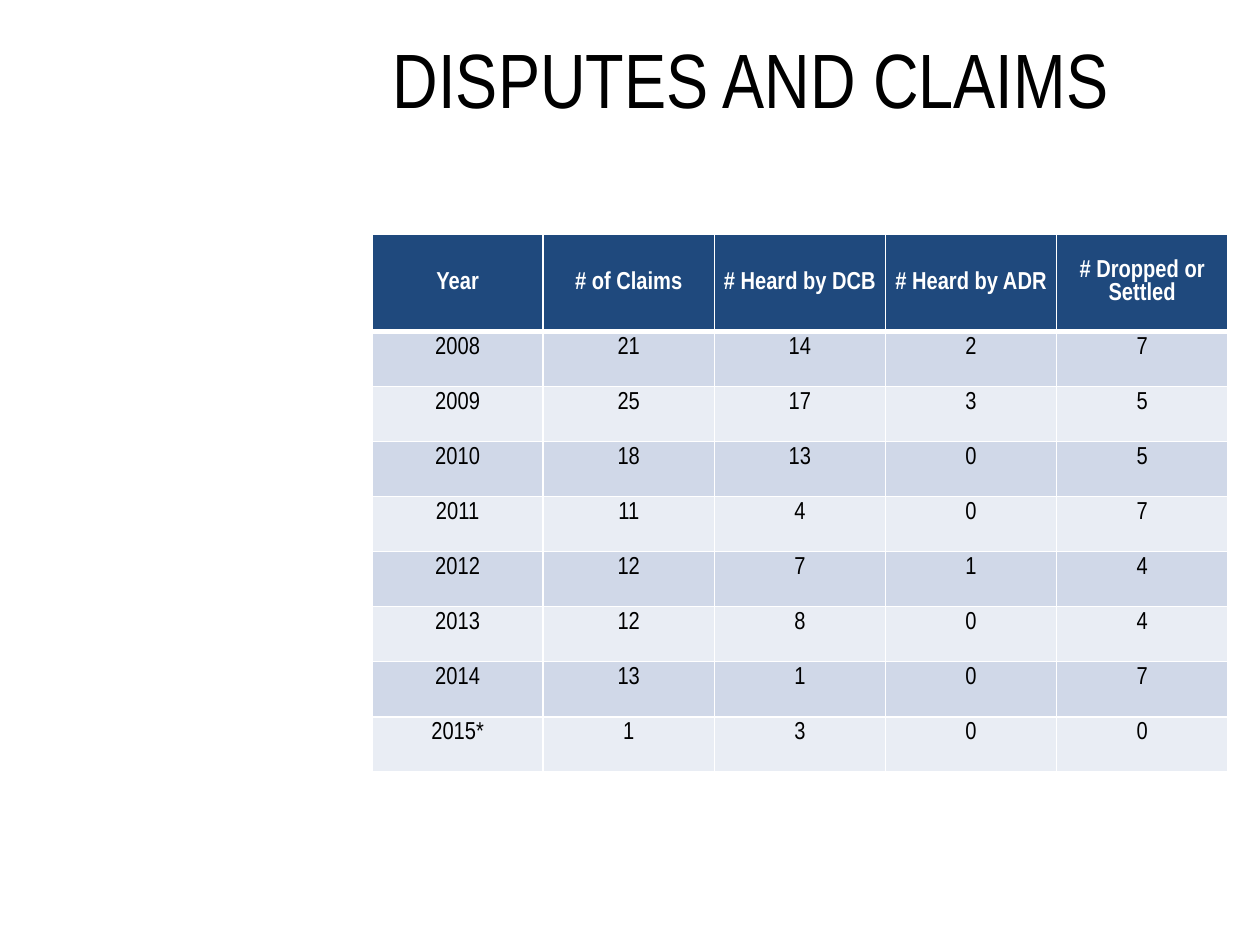
from lxml.etree import SubElement
from pptx import Presentation
from pptx.dml.color import RGBColor
from pptx.enum.text import MSO_ANCHOR, PP_ALIGN
from pptx.oxml.ns import qn
from pptx.util import Cm, Pt

COLORS = {
    "text": "000000",
    "white": "FFFFFF",
    "header": "1F497D",
    "odd_row": "D0D8E8",
    "even_row": "E9EDF4",
}
FONT = "Arial Narrow"
HEADERS = ["Year", "# of Claims", "# Heard by DCB", "# Heard by ADR", "# Dropped or Settled"]
CLAIMS = [
    ["2008", 21, 14, 2, 7],
    ["2009", 25, 17, 3, 5],
    ["2010", 18, 13, 0, 5],
    ["2011", 11, 4, 0, 7],
    ["2012", 12, 7, 1, 4],
    ["2013", 12, 8, 0, 4],
    ["2014", 13, 1, 0, 7],
    ["2015*", 1, 3, 0, 0],
]


def write_text(frame, text, size=14, color="text", bold=False):
    """Write one centred, formatted paragraph into a text frame."""
    paragraph = frame.paragraphs[0]
    paragraph.alignment = PP_ALIGN.CENTER
    run = paragraph.add_run()
    run.text = text
    run.font.name = FONT
    run.font.size = Pt(size)
    run.font.bold = bold
    run.font.color.rgb = RGBColor.from_string(COLORS[color])


def set_borders(cell, left=1, right=1, top=1, bottom=1):
    """Draw white cell borders with the given widths in points."""
    properties = cell._tc.get_or_add_tcPr()
    for side, width in zip("LRTB", (left, right, top, bottom)):
        line = SubElement(properties, qn(f"a:ln{side}"), w=str(Pt(width)))
        fill = SubElement(line, qn("a:solidFill"))
        SubElement(fill, qn("a:srgbClr"), val=COLORS["white"])


def format_cell(cell, text, fill, anchor=MSO_ANCHOR.TOP, borders=None, **text_format):
    """Fill, border and write one table cell."""
    set_borders(cell, **(borders or {}))
    cell.fill.solid()
    cell.fill.fore_color.rgb = RGBColor.from_string(COLORS[fill])
    cell.margin_left = cell.margin_right = Cm(0.18)
    cell.margin_top = cell.margin_bottom = Cm(0.1)
    cell.vertical_anchor = anchor
    write_text(cell.text_frame, text, **text_format)


def place_title(slide, left, top, width, height):
    """Place the slide title in the given box."""
    title = slide.shapes.title
    title.left, title.top, title.width, title.height = left, top, width, height
    title.text_frame.word_wrap = True
    title.text_frame.vertical_anchor = MSO_ANCHOR.BOTTOM
    write_text(title.text_frame, "DISPUTES AND CLAIMS", size=44)


def place_claims_table(slide, left, top, width, height, header_height):
    """Place the claims table with equal columns and equal data rows."""
    shape = slide.shapes.add_table(len(CLAIMS) + 1, len(HEADERS), left, top, width, height)
    table = shape.table
    for column in table.columns:
        column.width = width // len(HEADERS)
    for row in table.rows:
        row.height = (height - header_height) // len(CLAIMS)
    table.rows[0].height = header_height

    for cell, text in zip(table.rows[0].cells, HEADERS):
        format_cell(cell, text, "header", anchor=MSO_ANCHOR.MIDDLE,
                    borders={"bottom": 3}, color="white", bold=True)
    for index, values in enumerate(CLAIMS, start=1):
        fill = "odd_row" if index % 2 else "even_row"
        borders = {"top": 3} if index == 1 else None
        for cell, value in zip(table.rows[index].cells, values):
            format_cell(cell, str(value), fill, borders=borders)


def main():
    """Build and save the presentation."""
    presentation = Presentation()
    presentation.slide_width = Cm(25.4)
    presentation.slide_height = Cm(19.05)
    slide = presentation.slides.add_slide(presentation.slide_layouts[5])
    place_title(slide, Cm(7.42), Cm(0.5), Cm(15.44), Cm(2.13))
    place_claims_table(slide, Cm(7.5), Cm(4.73), Cm(17.25), Cm(10.83), Cm(1.95))
    presentation.save("out.pptx")


if __name__ == "__main__":
    main()
